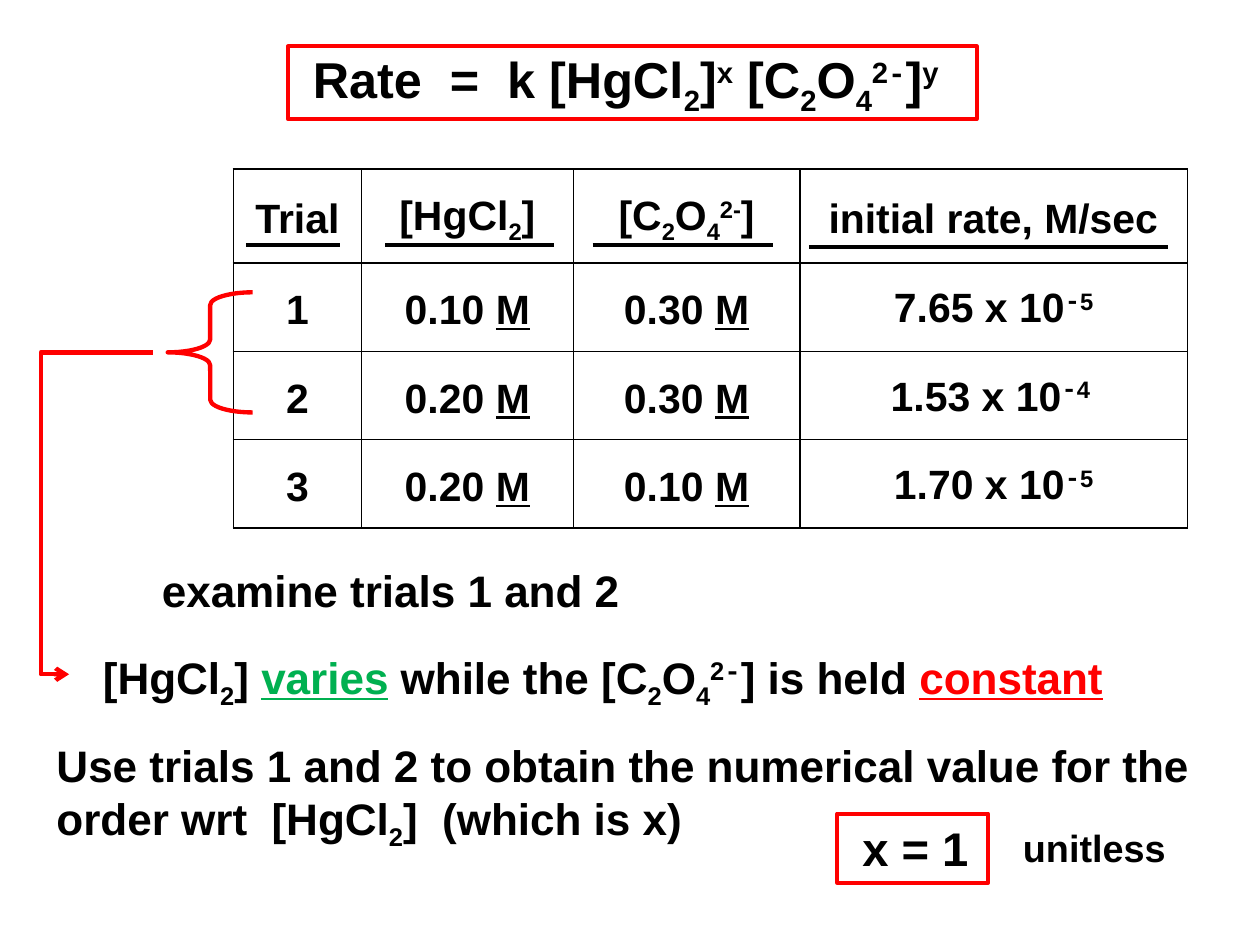
from collections import namedtuple
from dataclasses import dataclass

from lxml.etree import SubElement
from pptx import Presentation
from pptx.dml.color import RGBColor
from pptx.enum.shapes import MSO_CONNECTOR, MSO_SHAPE
from pptx.enum.text import MSO_ANCHOR, MSO_AUTO_SIZE, PP_ALIGN
from pptx.oxml.ns import qn
from pptx.util import Emu, Pt

PX = 9144  # EMU in one px: 100 px to the inch
Box = namedtuple("Box", "left top width height")


@dataclass(frozen=True)
class Theme:
    font: str = "Arial"
    minus_font: str = "Courier New"
    ink: RGBColor = RGBColor(0, 0, 0)
    paper: RGBColor = RGBColor(255, 255, 255)
    accent: RGBColor = RGBColor(255, 0, 0)
    varying: RGBColor = RGBColor(0, 176, 80)
    title: int = 32
    answer: int = 30
    body: int = 28
    table: int = 26
    small: int = 24
    thin: float = 1
    rule: float = 2.5
    thick: float = 2.75


THEME = Theme()
SUB, SUP = "-25000", "30000"


def px(length):
    return Emu(length * PX)


def emu_box(box):
    return [px(length) for length in box]


def sub(text):
    return text, {"baseline": SUB}


def sup(text):
    return text, {"baseline": SUP}


def minus(size):
    return "-", {"baseline": SUP, "font": THEME.minus_font, "size": size}


def underlined(text, color=None):
    return text, {"underline": True, "color": color}


def chloride():
    return ["[HgCl", sub("2"), "]"]


def oxalate(*charge):
    return ["[C", sub("2"), "O", sub("4"), *charge, "]"]


def write(paragraph, runs, size):
    """Fill a paragraph with plain strings and (text, style) pairs."""
    font = paragraph.font
    font.name, font.size, font.bold = THEME.font, Pt(size), True
    font.color.rgb = THEME.ink
    for part in runs:
        text, style = (part, {}) if isinstance(part, str) else part
        run = paragraph.add_run()
        run.text = text
        if style.get("font"):
            run.font.name = style["font"]
            run.font.size = Pt(style["size"])
        if style.get("underline"):
            run.font.underline = True
        if style.get("color"):
            run.font.color.rgb = style["color"]
        if style.get("baseline"):
            run.font._element.set("baseline", style["baseline"])


def set_line(shape, color, width):
    shape.line.color.rgb = color
    shape.line.width = Pt(width)


def add_text(slide, box, runs, size):
    frame = slide.shapes.add_textbox(*emu_box(box)).text_frame
    frame.word_wrap = True
    write(frame.paragraphs[0], runs, size)


def rate_law(slide, box):
    title = slide.shapes.title
    title.left, title.top, title.width, title.height = emu_box(box)
    title.fill.solid()
    title.fill.fore_color.rgb = THEME.paper
    set_line(title, THEME.accent, THEME.rule)
    frame = title.text_frame
    frame.auto_size = MSO_AUTO_SIZE.NONE
    frame.vertical_anchor = MSO_ANCHOR.MIDDLE
    frame.margin_left = px(22)
    paragraph = frame.paragraphs[0]
    paragraph.alignment = PP_ALIGN.LEFT
    write(paragraph, ["Rate  =  k ", *chloride(), sup("x"), " ",
                      *oxalate(sup("2"), minus(THEME.title)), sup("y")], THEME.title)


def set_borders(cell):
    properties = cell._tc.get_or_add_tcPr()
    for position, side in enumerate(("lnL", "lnR", "lnT", "lnB")):
        line = SubElement(properties, qn(f"a:{side}"), w=str(Pt(THEME.thin)))
        fill = SubElement(line, qn("a:solidFill"))
        SubElement(fill, qn("a:srgbClr"), val=str(THEME.ink))
        properties.insert(position, line)


def trials_table(slide, box):
    headers = [["Trial"], chloride(), oxalate(sup("2-")), ["initial rate, M/sec"]]
    trials = [("1", "0.10 ", "0.30 ", "7.65 x 10", "5"),
              ("2", "0.20 ", "0.30 ", "1.53 x 10", "4 "),
              ("3", "0.20 ", "0.10 ", "1.70 x 10", "5")]
    rows = [headers] + [
        [[trial], [mercury, underlined("M")], [carbon, underlined("M")],
         [rate, minus(THEME.body), sup(power)]]
        for trial, mercury, carbon, rate, power in trials]
    widths = (113, 187, 200, 342)
    header_height, row_height = 83, 78

    table = slide.shapes.add_table(len(rows), len(widths), *emu_box(box)).table
    table.first_row = table.horz_banding = False
    for column, width in zip(table.columns, widths):
        column.width = px(width)
    for index, row in enumerate(table.rows):
        row.height = px(row_height if index else header_height)
        for cell, runs in zip(row.cells, rows[index]):
            cell.fill.background()
            set_borders(cell)
            cell.vertical_anchor = MSO_ANCHOR.MIDDLE
            cell.margin_left = cell.margin_right = px(7)
            cell.margin_top = cell.margin_bottom = 0
            paragraph = cell.text_frame.paragraphs[0]
            paragraph.alignment = PP_ALIGN.CENTER
            paragraph.line_spacing = 1.15
            write(paragraph, runs, THEME.table)

    column_left = box.left
    rules = [(11, 83, 67), (21, 149, 67), (17, 159, 67), (8, 317, 69)]
    for width, (inset, length, drop) in zip(widths, rules):
        left, top = column_left + inset, box.top + drop
        rule = slide.shapes.add_connector(
            MSO_CONNECTOR.STRAIGHT, px(left), px(top), px(left + length), px(top))
        set_line(rule, THEME.ink, THEME.rule)
        SubElement(rule._element.spPr, qn("a:effectLst"))
        column_left += width


def trial_pointer(slide, box):
    """Brace around trials 1 and 2, with a bent arrow down to the finding."""
    brace_box = Box(box.left + 112, box.top, 75, 106)
    brace = slide.shapes.add_shape(MSO_SHAPE.LEFT_BRACE, *emu_box(brace_box))
    brace.adjustments[0] = 0.15
    start_top = box.top + brace_box.height // 2
    bottom = box.top + box.height
    builder = slide.shapes.build_freeform(box.left + 99, start_top, scale=PX)
    builder.add_line_segments([(box.left, start_top), (box.left, bottom),
                               (box.left + 25, bottom)], close=False)
    arrow = builder.convert_to_shape()
    for shape in (brace, arrow):
        shape.shadow.inherit = False
        shape.fill.background()
        set_line(shape, THEME.accent, THEME.thick)
    SubElement(arrow.line._get_or_add_ln(), qn("a:tailEnd"), type="arrow")


def reasoning(slide, box):
    left, top = box.left, box.top
    add_text(slide, Box(left + 93, top, 483, 57), ["examine trials 1 and 2"], THEME.body)
    finding = [*chloride(), " ", underlined("varies", THEME.varying), " while the ",
               *oxalate(sup("2"), minus(THEME.answer)), " is held ",
               underlined("constant", THEME.accent)]
    add_text(slide, Box(left + 41, top + 74, 983, 57), finding, THEME.body)
    task = ["Use trials 1 and 2 to obtain the numerical value for the order wrt  ",
            *chloride(), "  (which is x)"]
    add_text(slide, Box(left, top + 155, box.width, 104), task, THEME.body)


def answer(slide, box):
    frame_box = Box(box.left, box.top, 133, box.height)
    shape = slide.shapes.add_shape(MSO_SHAPE.RECTANGLE, *emu_box(frame_box))
    shape.shadow.inherit = False
    shape.fill.background()
    set_line(shape, THEME.accent, THEME.thick)
    frame = shape.text_frame
    frame.vertical_anchor = MSO_ANCHOR.TOP
    frame.margin_left = px(22)
    paragraph = frame.paragraphs[0]
    paragraph.alignment = PP_ALIGN.LEFT
    write(paragraph, ["x = 1"], THEME.answer)
    add_text(slide, Box(box.left + 154, box.top + 5, 167, 51), ["unitless"], THEME.small)


def main():
    presentation = Presentation()
    presentation.slide_width, presentation.slide_height = px(1112), px(833)
    slide = presentation.slides.add_slide(presentation.slide_layouts[5])
    rate_law(slide, Box(254, 41, 608, 64))
    trials_table(slide, Box(206, 149, 842, 317))
    trial_pointer(slide, Box(36, 258, 187, 337))
    reasoning(slide, Box(40, 492, 1069, 259))
    answer(slide, Box(739, 718, 321, 61))
    presentation.save("out.pptx")


if __name__ == "__main__":
    main()
